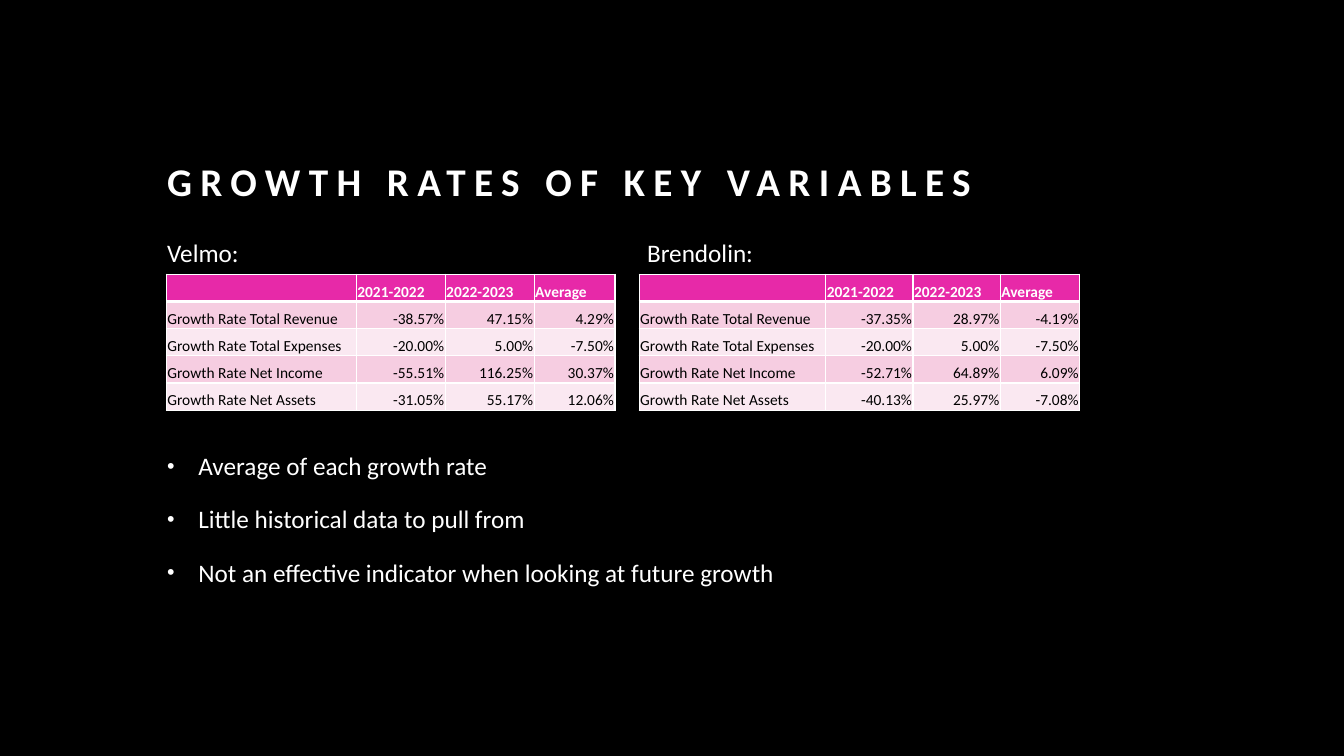
from lxml.etree import SubElement
from pptx import Presentation
from pptx.dml.color import RGBColor
from pptx.enum.text import MSO_ANCHOR as Anchor, PP_ALIGN as Align
from pptx.oxml.ns import qn
from pptx.util import Inches, Pt

TITLE = "GROWTH RATES OF KEY VARIABLES"
HEADER = ["", "2021-2022", "2022-2023", "Average"]
MEASURES = ["Total Revenue", "Total Expenses", "Net Income", "Net Assets"]
GROUPS = [
    {"name": "Velmo:", "label_x": 1.56, "x": 1.65, "width": 4.45, "rates": [
        ("-38.57%", "47.15%", "4.29%"),
        ("-20.00%", "5.00%", "-7.50%"),
        ("-55.51%", "116.25%", "30.37%"),
        ("-31.05%", "55.17%", "12.06%")]},
    {"name": "Brendolin:", "label_x": 6.32, "x": 6.34, "width": 4.37, "rates": [
        ("-37.35%", "28.97%", "-4.19%"),
        ("-20.00%", "5.00%", "-7.50%"),
        ("-52.71%", "64.89%", "6.09%"),
        ("-40.13%", "25.97%", "-7.08%")]},
]
BULLETS = ["Average of each growth rate",
           "Little historical data to pull from",
           "Not an effective indicator when looking at future growth"]

FONT = "Calibri"
WHITE, BLACK, PINK = "FFFFFF", "000000", "E729A8"
BANDS = ["F6CDE1", "FAE8F1"]
LEFT, WIDTH = 1.56, 10.1
LABEL_Y, TABLE_Y, BULLET_Y = 2.22, 2.72, 4.33
ROW_H, COL_UNITS = 0.27, [1.88, 0.88, 0.88, 0.8]
INDENT = 0.31


def rgb(color):
    return RGBColor.from_string(color)


def style(p, size, color, bold=False):
    for r in p.runs:
        r.font.name, r.font.size, r.font.bold = FONT, Pt(size), bold
        r.font.color.rgb = rgb(color)


def add_text(s, lines, box, size=18, bold=False, spacing=1.3, before=10):
    tf = s.shapes.add_textbox(*map(Inches, box)).text_frame
    tf.word_wrap = True
    tf.text = "\n".join(lines)
    for p in tf.paragraphs:
        p.line_spacing, p.space_before = spacing, Pt(before)
        style(p, size, WHITE, bold)
    return tf


def add_bullet(p):
    pPr = p._p.get_or_add_pPr()
    pPr.set("marL", str(Inches(INDENT)))
    pPr.set("indent", str(-Inches(INDENT)))
    SubElement(pPr, qn("a:buSzPct"), val="85000")
    SubElement(pPr, qn("a:buFont"), typeface="Arial")
    SubElement(pPr, qn("a:buChar"), char="•")


def add_borders(cell, widths):
    tcPr = cell._tc.get_or_add_tcPr()
    for side, width in widths.items():
        ln = SubElement(tcPr, qn(f"a:ln{side}"), w=str(Pt(width)))
        SubElement(SubElement(ln, qn("a:solidFill")), qn("a:srgbClr"), val=WHITE)


def fill_cell(cell, text, row, col):
    add_borders(cell, {"L": 1, "R": 1, "T": 3 if row == 1 else 1,
                       "B": 3 if row == 0 else 1})
    cell.fill.solid()
    cell.fill.fore_color.rgb = rgb(BANDS[(row - 1) % 2] if row else PINK)
    cell.margin_left = cell.margin_right = cell.margin_top = Inches(0.01)
    cell.margin_bottom = 0
    cell.vertical_anchor = Anchor.BOTTOM
    p = cell.text_frame.paragraphs[0]
    if text:
        p.text = text
        p.alignment = Align.RIGHT if row and col else Align.LEFT
        style(p, 11, BLACK if row else WHITE, bold=row == 0)
    else:
        p._p.get_or_add_endParaRPr().set("sz", "1100")


def add_rates(s, group):
    rows = [HEADER] + [(f"Growth Rate {m}", *r) for m, r in zip(MEASURES, group["rates"])]
    box = (group["x"], TABLE_Y, group["width"], ROW_H * len(rows))
    table = s.shapes.add_table(len(rows), len(HEADER), *map(Inches, box)).table
    for column, units in zip(table.columns, COL_UNITS):
        column.width = Inches(group["width"] * units / sum(COL_UNITS))
    for i, row in enumerate(rows):
        table.rows[i].height = Inches(ROW_H)
        for j, text in enumerate(row):
            fill_cell(table.cell(i, j), text, i, j)


def main():
    """Build the growth rate slide and save it."""
    prs = Presentation()
    prs.slide_width, prs.slide_height = Inches(13.33), Inches(7.5)
    s = prs.slides.add_slide(prs.slide_layouts[6])
    s.background.fill.solid()
    s.background.fill.fore_color.rgb = rgb(BLACK)

    tf = add_text(s, [TITLE], (LEFT, 1.14, WIDTH, 0.94), 28, True, 1.2, 0)
    tf.vertical_anchor = Anchor.BOTTOM
    tf.paragraphs[0].runs[0].font._element.set("spc", "600")

    for group in GROUPS:
        add_text(s, [group["name"]], (group["label_x"], LABEL_Y, group["width"], 0.5))
        add_rates(s, group)

    for p in add_text(s, BULLETS, (LEFT, BULLET_Y, WIDTH, 2.03)).paragraphs:
        add_bullet(p)
    prs.save("out.pptx")


if __name__ == "__main__":
    main()
